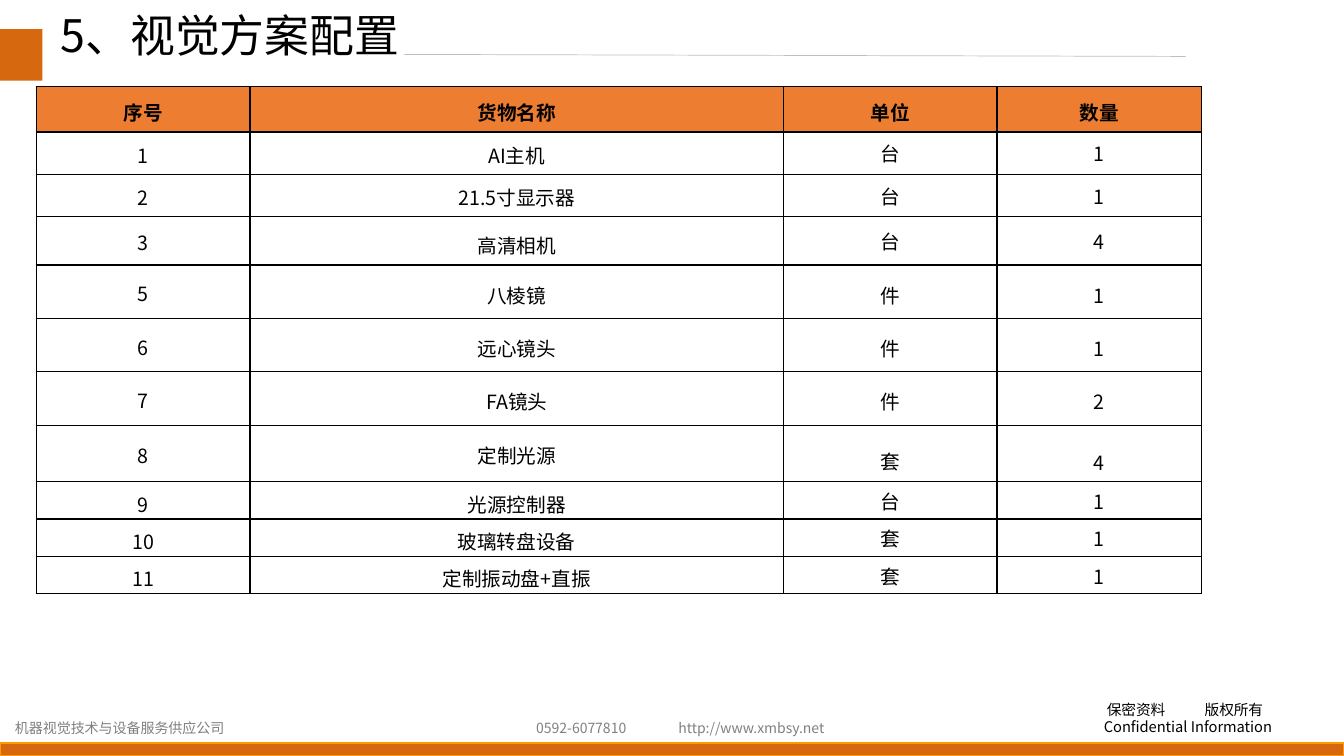
from pptx import Presentation
from pptx.dml.color import RGBColor
from pptx.enum.shapes import MSO_CONNECTOR, MSO_SHAPE
from pptx.enum.text import MSO_ANCHOR, PP_ALIGN
from pptx.oxml.ns import qn
from pptx.util import Inches, Pt
from lxml.etree import SubElement

ORANGE = RGBColor(0xD6, 0x68, 0x0F)
AMBER = RGBColor(0xFF, 0x99, 0x00)
HEADER = RGBColor(0xED, 0x7D, 0x31)
BLACK = RGBColor(0, 0, 0)
WHITE = RGBColor(0xFF, 0xFF, 0xFF)
GRAY = RGBColor(0x80, 0x80, 0x80)
RULE = RGBColor(0xBF, 0xBF, 0xBF)
FONT = "Noto Sans CJK SC"

COLS = [2.12, 5.29, 2.12, 2.03]
HEADINGS = ["序号", "货物名称", "单位", "数量"]
# Row height, cell texts, line spacing of each cell
ITEMS = [
    (0.42, ["1", "AI主机", "台", "1"], [1.1, 1.1, 1, 1]),
    (0.42, ["2", "21.5寸显示器", "台", "1"], [1.1, 1.1, 1, 1]),
    (0.48, ["3", "高清相机", "台", "4"], [1.1, 1.3, 1, 1]),
    (0.53, ["5", "八棱镜", "件", "1"], [1.1, 1.2, 1.2, 1.2]),
    (0.53, ["6", "远心镜头", "件", "1"], [1.1, 1.2, 1.2, 1.2]),
    (0.53, ["7", "FA镜头", "件", "2"], [1.1, 1.2, 1.2, 1.2]),
    (0.56, ["8", "定制光源", "套", "4"], [1.1, 1.1, 1.5, 1.6]),
    (0.37, ["9", "光源控制器", "台", "1"], [1.1, 1.1, 1, 1]),
    (0.37, ["10", "玻璃转盘设备", "套", "1"], [1.1, 1.1, 1, 1]),
    (0.37, ["11", "定制振动盘+直振", "套", "1"], [1.1, 1.1, 1, 1]),
]


def write(tf, text, size=14, color=BLACK, bold=False, align=PP_ALIGN.LEFT,
          spacing=1.0):
    """Fill a text frame, one paragraph per line of text."""
    for i, line in enumerate(text.split("\n")):
        p = tf.paragraphs[0] if i == 0 else tf.add_paragraph()
        p.alignment, p.line_spacing = align, spacing
        p.space_before = Pt(0)
        r = p.add_run()
        r.text = line
        r.font.size, r.font.bold, r.font.name = Pt(size), bold, FONT
        r.font.color.rgb = color
        SubElement(r.font._element, qn("a:ea")).set("typeface", FONT)


def add_text(s, x, y, w, h, text, **fmt):
    box = s.shapes.add_textbox(Inches(x), Inches(y), Inches(w), Inches(h))
    box.text_frame.word_wrap = True
    write(box.text_frame, text, **fmt)
    return box


def add_bar(s, x, y, w, h, line=None):
    sp = s.shapes.add_shape(MSO_SHAPE.RECTANGLE, Inches(x), Inches(y),
                            Inches(w), Inches(h))
    sp.shadow.inherit = False
    sp.fill.solid()
    sp.fill.fore_color.rgb = ORANGE
    if line is None:
        sp.line.fill.background()
    else:
        sp.line.color.rgb, sp.line.width = line, Pt(1)


def add_header(s, x, y, w, h):
    # Accent block, thin rule and title
    add_bar(s, x, y + 0.2, 0.42, 0.51)
    rule = s.shapes.add_connector(
        MSO_CONNECTOR.STRAIGHT, Inches(x + 4.01), Inches(y + 0.45),
        Inches(x + w), Inches(y + 0.47))
    rule.line.color.rgb, rule.line.width = RULE, Pt(0.5)
    SubElement(rule._element.spPr, qn("a:effectLst"))
    title = s.shapes.title
    title.left, title.top = Inches(x + 0.5), Inches(y)
    title.width, title.height = Inches(3.83), Inches(h)
    tf = title.text_frame
    tf.word_wrap, tf.vertical_anchor = True, MSO_ANCHOR.TOP
    write(tf, "5、视觉方案配置", size=32, spacing=0.9)


def set_borders(cell):
    tc_pr = cell._tc.get_or_add_tcPr()
    for i, side in enumerate(("lnL", "lnR", "lnT", "lnB")):
        ln = tc_pr.makeelement(qn(f"a:{side}"), {"w": str(Pt(1))})
        fill = SubElement(ln, qn("a:solidFill"))
        SubElement(fill, qn("a:srgbClr")).set("val", str(BLACK))
        tc_pr.insert(i, ln)


def add_goods_table(s, x, y, w, h):
    rows = [(0.45, HEADINGS, [1.2] * len(COLS))] + ITEMS
    table = s.shapes.add_table(len(rows), len(COLS), Inches(x), Inches(y),
                               Inches(w), Inches(h)).table
    table.first_row = table.horz_banding = False
    for col, width in zip(table.columns, COLS):
        col.width = Inches(width)
    for i, (height, texts, spacings) in enumerate(rows):
        head = i == 0
        table.rows[i].height = Inches(height)
        for j, (text, spacing) in enumerate(zip(texts, spacings)):
            cell = table.cell(i, j)
            cell.fill.solid()
            cell.fill.fore_color.rgb = HEADER if head else WHITE
            cell.vertical_anchor = MSO_ANCHOR.TOP if head else MSO_ANCHOR.MIDDLE
            write(cell.text_frame, text, bold=head, align=PP_ALIGN.CENTER,
                  spacing=spacing)
            set_borders(cell)


def add_footer(s, x, y, w, h):
    # Bottom band
    add_bar(s, x, y + h - 0.13, w, 0.13, line=AMBER)
    # Company, phone and site
    for left, width, text in [(0.05, 2.35, "机器视觉技术与设备服务供应公司"),
                              (5.22, 1.2, "0592-6077810"),
                              (6.63, 1.67, "http://www.xmbsy.net")]:
        add_text(s, x + left, y + 0.19, width, 0.27, text, size=10, color=GRAY)
    # Confidentiality notice, its two phrases set apart by a tab stop
    notice = add_text(s, x + 10.85, y, 2.17, 0.45,
                      "保密资料\t版权所有\nConfidential Information", size=10.5)
    p_pr = notice.text_frame.paragraphs[0]._p.get_or_add_pPr()
    p_pr.set("indent", str(Inches(0.03)))
    tabs = SubElement(p_pr, qn("a:tabLst"))
    SubElement(tabs, qn("a:tab"), pos=str(Inches(0.81)), algn="l")


def main():
    prs = Presentation()
    prs.slide_width, prs.slide_height = Inches(13.33), Inches(7.5)
    s = prs.slides.add_slide(prs.slide_layouts[5])
    add_footer(s, 0, 6.9, 13.33, 0.6)
    add_header(s, 0, 0.09, 11.76, 0.71)
    add_goods_table(s, 0.36, 0.86, 11.56, 5.02)
    prs.save("out.pptx")


if __name__ == "__main__":
    main()
